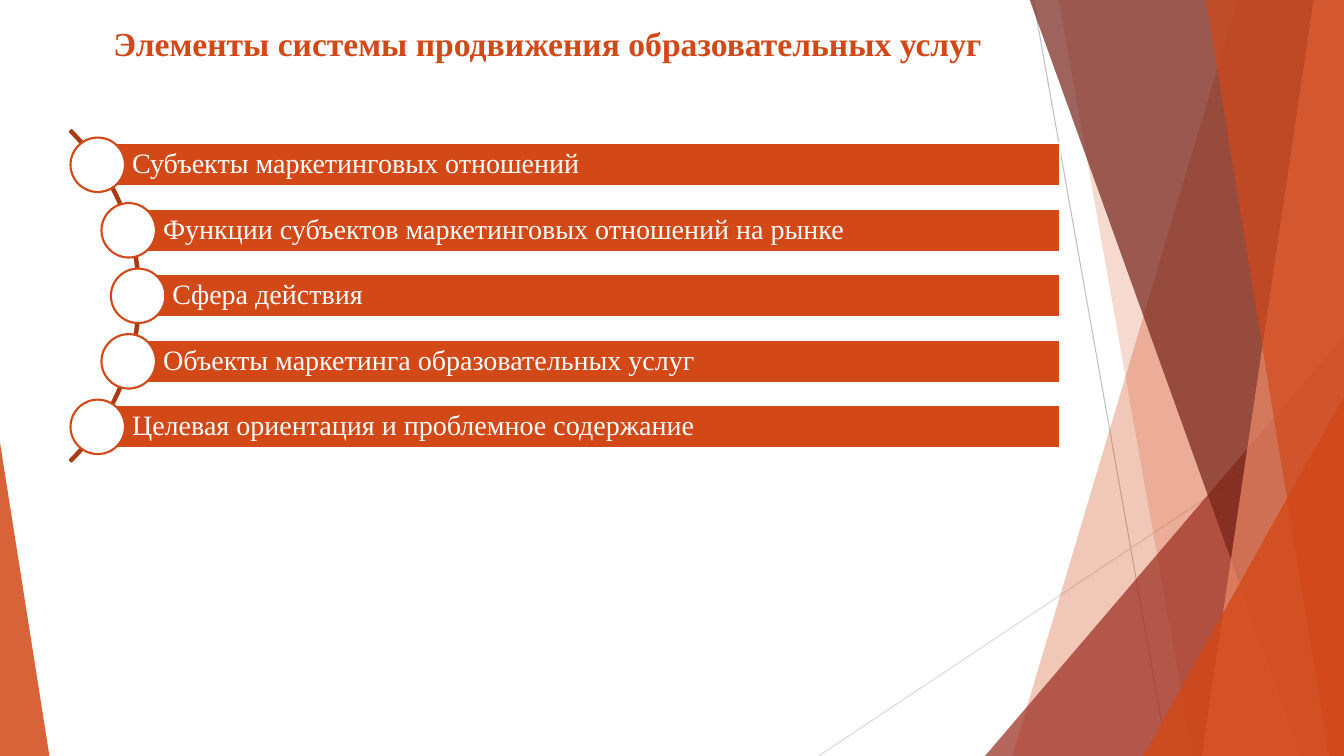
from dataclasses import dataclass
from math import sqrt

from lxml.etree import SubElement
from pptx import Presentation
from pptx.dml.color import RGBColor
from pptx.enum.shapes import MSO_CONNECTOR, MSO_SHAPE as SHAPE
from pptx.enum.text import MSO_ANCHOR as ANCHOR, PP_ALIGN as ALIGN
from pptx.oxml.ns import qn
from pptx.util import Inches, Pt

FONT = "Times New Roman"
ORANGE, DARK_ORANGE, WHITE = "D34817", "A93A12", "FFFFFF"
WIDTH, HEIGHT, TOP = 13.33, 7.5, -0.01

ARC_X, ARC_Y, ARC_SIZE = -3.26, 0.61, 4.65
DOT_ORBIT_X, DOT_ORBIT_RADIUS = -0.94, 2.31
BAR_TOP, BAR_STEP, BAR_HEIGHT, BAR_RIGHT = 1.42, 0.65, 0.43, 10.51
DOT_SIZE = 0.54

TITLE = "Элементы системы продвижения образовательных услуг"
ELEMENTS = [
    "Субъекты маркетинговых отношений",
    "Функции субъектов маркетинговых отношений на рынке",
    "Сфера действия",
    "Объекты маркетинга образовательных услуг",
    "Целевая ориентация и проблемное содержание",
]


@dataclass
class Ray:
    start: tuple[float, float]
    end: tuple[float, float]
    color: str


@dataclass
class Band:
    """A facet between a slanted left edge and the right side of the slide."""
    top_x: float
    bottom_x: float
    color: str
    opacity: int


@dataclass
class Wedge:
    box: tuple[float, float, float, float]
    apex: float
    color: str
    opacity: int


RAYS = [
    Ray((10.25, 0), (11.58, HEIGHT), "BFBFBF"),
    Ray((WIDTH, 4.03), (8.12, HEIGHT), "D9D9D9"),
]
FACETS = [
    Band(12.28, 10.04, ORANGE, 30),
    Band(10.5, 11.83, ORANGE, 20),
    Wedge((9.77, 3.33, 3.56, 4.17), 1, "9B2D1F", 72),
    Band(10.21, 12.91, "742217", 70),
    Band(13.03, 11.92, "EF8C6A", 70),
    Band(11.96, 13.18, ORANGE, 65),
    Wedge((11.34, 3.93, 1.99, 3.57), 1, ORANGE, 80),
    Wedge((0, 4.39, 0.49, 3.11), 0, ORANGE, 85),
]


def rgb(value: str) -> RGBColor:
    return RGBColor.from_string(value)


def paint(sp, fill: str | None, line: str | None = None, opacity: int = 100) -> None:
    sp.shadow.inherit = False
    if fill:
        sp.fill.solid()
        sp.fill.fore_color.rgb = rgb(fill)
        if opacity < 100:
            color = sp.fill._xPr.find(qn("a:solidFill"))[0]
            SubElement(color, qn("a:alpha"), val=str(opacity * 1000))
    else:
        sp.fill.background()
    if line:
        sp.line.color.rgb = rgb(line)
        sp.line.width = Pt(1.5)
    else:
        sp.line.fill.background()


def add_preset(s, kind: SHAPE, box: tuple, adjustments: tuple = ()):
    sp = s.shapes.add_shape(kind, *map(Inches, box))
    for i, value in enumerate(adjustments):
        sp.adjustments[i] = value
    return sp


def write(sp, text: str, frame: dict, paragraph: dict, font: dict, color: str) -> None:
    tf = sp.text_frame
    p = tf.paragraphs[0]
    r = p.add_run()
    r.text = text
    r.font.color.rgb = rgb(color)
    for target, values in ((tf, frame), (p, paragraph), (r.font, font)):
        for name, value in values.items():
            setattr(target, name, value)


def add_ray(s, ray: Ray) -> None:
    line = s.shapes.add_connector(
        MSO_CONNECTOR.STRAIGHT, *map(Inches, ray.start + ray.end))
    line.line.color.rgb = rgb(ray.color)
    line.line.width = Pt(0.75)
    SubElement(line._element.spPr, qn("a:effectLst"))


def add_facet(s, facet: Band | Wedge) -> None:
    if isinstance(facet, Wedge):
        sp = add_preset(s, SHAPE.ISOSCELES_TRIANGLE, facet.box, (facet.apex,))
    else:
        corners = [(facet.top_x, TOP), (WIDTH, TOP),
                   (WIDTH, HEIGHT), (facet.bottom_x, HEIGHT)]
        start, *rest = [(Inches(x), Inches(y)) for x, y in corners]
        outline = s.shapes.build_freeform(*start)
        outline.add_line_segments(rest, close=True)
        sp = outline.convert_to_shape()
    paint(sp, facet.color, opacity=facet.opacity)


def add_title(s) -> None:
    sp = s.shapes.add_textbox(*map(Inches, (0.73, 0.18, 9.4, 1.03)))
    write(sp, TITLE,
          {"word_wrap": True, "vertical_anchor": ANCHOR.TOP},
          {"alignment": ALIGN.CENTER},
          {"name": FONT, "size": Pt(24), "bold": True}, ORANGE)


def add_element(s, index: int, text: str) -> None:
    """Add a labelled bar and its dot, which sits on the arc."""
    top = BAR_TOP + BAR_STEP * index
    rise = BAR_STEP * (index - (len(ELEMENTS) - 1) / 2)
    left = DOT_ORBIT_X + sqrt(DOT_ORBIT_RADIUS ** 2 - rise ** 2)

    bar = add_preset(s, SHAPE.RECTANGLE, (left, top, BAR_RIGHT - left, BAR_HEIGHT))
    paint(bar, ORANGE, WHITE)
    inset = Inches(0.06)
    write(bar, text,
          {"word_wrap": True, "vertical_anchor": ANCHOR.MIDDLE,
           "margin_left": Inches(0.34), "margin_right": inset,
           "margin_top": inset, "margin_bottom": inset},
          {"alignment": ALIGN.LEFT, "line_spacing": 0.9},
          {"name": FONT, "size": Pt(20)}, WHITE)

    dot_top = top + (BAR_HEIGHT - DOT_SIZE) / 2
    dot = add_preset(s, SHAPE.OVAL, (left - DOT_SIZE / 2, dot_top, DOT_SIZE, DOT_SIZE))
    paint(dot, WHITE, ORANGE)


def main() -> None:
    prs = Presentation()
    prs.slide_width, prs.slide_height = Inches(WIDTH), Inches(HEIGHT)
    s = prs.slides.add_slide(prs.slide_layouts[6])

    for ray in RAYS:
        add_ray(s, ray)
    for facet in FACETS:
        add_facet(s, facet)
    add_title(s)

    arc = add_preset(s, SHAPE.BLOCK_ARC, (ARC_X, ARC_Y, ARC_SIZE, ARC_SIZE),
                     (189, 27, 0.005))
    paint(arc, None, DARK_ORANGE)
    for index, text in enumerate(ELEMENTS):
        add_element(s, index, text)

    prs.save("out.pptx")


if __name__ == "__main__":
    main()
